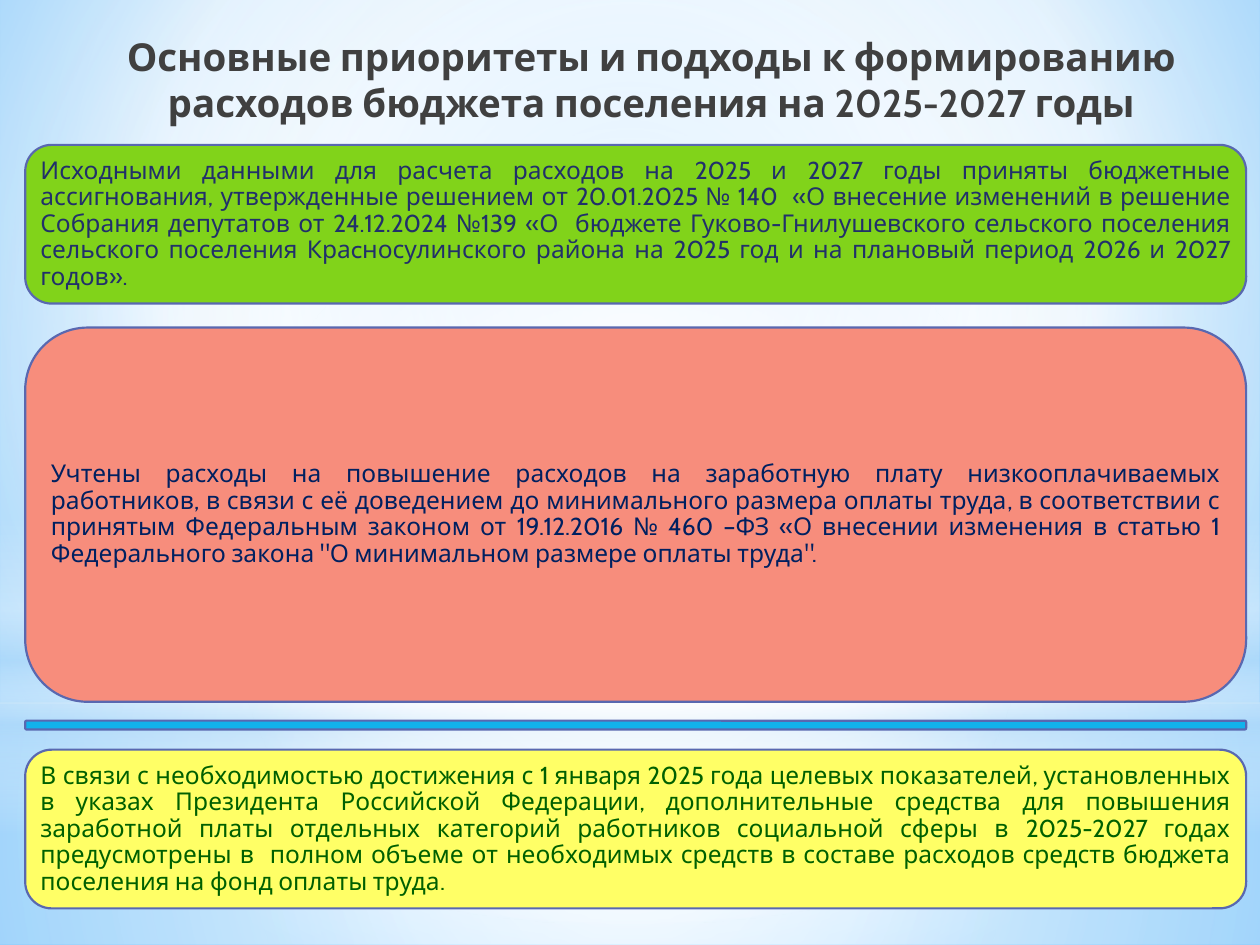
from dataclasses import dataclass
from typing import Optional

from pptx import Presentation
from pptx.dml.color import RGBColor
from pptx.enum.shapes import MSO_SHAPE
from pptx.enum.text import MSO_ANCHOR, MSO_AUTO_SIZE, PP_ALIGN
from pptx.oxml import parse_xml
from pptx.oxml.ns import nsdecls, qn
from pptx.util import Inches, Pt

RECT, OVAL, ROUNDED = MSO_SHAPE.RECTANGLE, MSO_SHAPE.OVAL, MSO_SHAPE.ROUNDED_RECTANGLE
CENTER, JUSTIFY = PP_ALIGN.CENTER, PP_ALIGN.JUSTIFY
TOP, MIDDLE = MSO_ANCHOR.TOP, MSO_ANCHOR.MIDDLE

# Grid of 200 columns by 150 rows
CELL = 0.05
COLUMNS, ROWS = 200, 150
PANEL_LEFT, PANEL_WIDTH = 4, 193.8
# Share of the height by which a rounded corner pushes text inwards
CORNER_INSET = 0.29 / 6


@dataclass(frozen=True)
class Theme:
    font: str = "Cabin"
    title_size: float = 22
    body_size: float = 14
    title: str = "404040"
    outline: str = "5968B0"
    outline_width: float = 1.25
    green: str = "81D31A"
    coral: str = "F78D7C"
    blue: str = "12B2EB"
    yellow: str = "FFFF66"
    indigo_text: str = "21306A"
    navy_text: str = "002060"
    green_text: str = "006000"


THEME = Theme()


@dataclass(frozen=True)
class Gradient:
    stops: tuple  # (position %, colour, opacity %)
    center: Optional[tuple] = (50, 50, 50, 50)  # None means top to bottom


@dataclass(frozen=True)
class Glow:
    kind: int
    top: float
    height: float
    gradient: Gradient


@dataclass(frozen=True)
class Panel:
    top: float
    height: float
    fill: str
    color: str = ""
    text: str = ""


BACKGROUND = Gradient(((0, "9ED5FF", 100), (60, "FFFFFF", 100), (100, "5BB9FF", 100)),
                      (20, 10, 20, 60))
GLOWS = (
    Glow(RECT, 111.6, 38.4, Gradient(
        ((0, "FFFFFF", 91), (37, "FFFFFF", 76), (100, "B4DCFA", 79)))),
    Glow(RECT, 0, 111.6, Gradient(
        ((0, "FFFFFF", 89), (48, "FFFFFF", 62), (100, "B4DCFA", 79)))),
    Glow(RECT, 82.4, 50, Gradient(
        ((0, "FFFFFF", 0), (29, "FFFFFF", 30), (45, "B4DCFA", 40),
         (55, "FFFFFF", 26), (65, "B4DCFA", 60), (100, "FFFFFF", 0)), None)),
    Glow(OVAL, 35, 111.6, Gradient(((0, "FFFFFF", 100), (56, "FFFFFF", 0)))),
)

HEADING = ("Основные приоритеты и подходы к формированию "
           "расходов бюджета поселения на 2025-2027 годы")
PANELS = (
    Panel(23, 25.2, THEME.green, THEME.indigo_text,
          "Исходными данными для расчета расходов на 2025 и 2027 годы приняты бюджетные "
          "ассигнования, утвержденные решением от 20.01.2025 № 140  «О внесение изменений "
          "в решение Собрания депутатов от 24.12.2024 №139 «О  бюджете "
          "Гуково-Гнилушевского сельского поселения сельского поселения "
          "Краcносулинского района на 2025 год и на плановый период 2026 и 2027 годов»."),
    Panel(52, 59.4, THEME.coral, THEME.navy_text,
          "Учтены расходы на повышение расходов на заработную плату низкооплачиваемых "
          "работников, в связи с её доведением до минимального размера оплаты труда, "
          "в соответствии с принятым Федеральным законом от 19.12.2016 № 460 –ФЗ "
          "«О внесении изменения в статью 1 Федерального закона "
          '"О минимальном размере оплаты труда".'),
    Panel(114.4, 1.4, THEME.blue),
    Panel(119, 25.2, THEME.yellow, THEME.green_text,
          "В связи с необходимостью достижения с 1 января 2025 года целевых показателей, "
          "установленных в указах Президента Российской Федерации, дополнительные "
          "средства для повышения заработной платы отдельных категорий работников "
          "социальной сферы в 2025-2027 годах предусмотрены в  полном объеме от "
          "необходимых средств в составе расходов средств бюджета поселения на фонд "
          "оплаты труда."),
)


def grid(*cells: float) -> list:
    return [Inches(cell * CELL) for cell in cells]


def set_gradient(fill, owner, gradient: Gradient) -> None:
    """Replace the fill inside the owner element with a gradient."""
    stops = "".join(
        f'<a:gs pos="{position * 1000}"><a:srgbClr val="{color}">'
        f'<a:alpha val="{opacity * 1000}"/></a:srgbClr></a:gs>'
        for position, color, opacity in gradient.stops)
    if gradient.center:
        sides = " ".join(f'{side}="{share * 1000}"'
                         for side, share in zip("ltrb", gradient.center))
        direction = f'<a:path path="circle"><a:fillToRect {sides}/></a:path>'
    else:
        direction = '<a:lin ang="5400000" scaled="0"/>'
    fill.background()
    blank = owner.find(".//" + qn("a:noFill"))
    blank.getparent().replace(blank, parse_xml(
        f'<a:gradFill {nsdecls("a")} rotWithShape="1">'
        f'<a:gsLst>{stops}</a:gsLst>{direction}</a:gradFill>'))


def write(frame, text: str, *, size: float, color: str, align, anchor,
          bold: bool = False, spacing: float = 1, before: float = 0,
          after: float = 0, inset: float = 0.06) -> None:
    frame.word_wrap = True
    frame.auto_size = MSO_AUTO_SIZE.NONE
    frame.vertical_anchor = anchor
    frame.margin_left = frame.margin_right = Inches(inset)
    frame.margin_top = frame.margin_bottom = Inches(inset)
    paragraph = frame.paragraphs[0]
    paragraph.alignment = align
    paragraph.line_spacing = spacing
    paragraph.space_before, paragraph.space_after = Pt(before), Pt(after)
    run = paragraph.add_run()
    run.text = text
    run.font.name, run.font.size, run.font.bold = THEME.font, Pt(size), bold
    run.font.color.rgb = RGBColor.from_string(color)


def draw_glow(slide, glow: Glow) -> None:
    shape = slide.shapes.add_shape(glow.kind, *grid(0, glow.top, COLUMNS, glow.height))
    shape.shadow.inherit = False
    set_gradient(shape.fill, shape.element, glow.gradient)
    shape.line.fill.background()


def draw_heading(slide) -> None:
    heading = slide.shapes.title
    heading.left, heading.top, heading.width, heading.height = grid(15, 4.2, 174.8, 17.4)
    # Bring the heading in front of the glows
    heading.element.getparent().append(heading.element)
    write(heading.text_frame, HEADING, size=THEME.title_size, color=THEME.title,
          align=CENTER, anchor=TOP, bold=True, before=4.4, after=3, inset=0.05)
    heading.text_frame.margin_left = Inches(0.15)


def draw_panel(slide, panel: Panel) -> None:
    box = slide.shapes.add_shape(
        ROUNDED, *grid(PANEL_LEFT, panel.top, PANEL_WIDTH, panel.height))
    box.shadow.inherit = False
    box.fill.solid()
    box.fill.fore_color.rgb = RGBColor.from_string(panel.fill)
    box.line.color.rgb = RGBColor.from_string(THEME.outline)
    box.line.width = Pt(THEME.outline_width)
    if panel.text:
        inset = panel.height * CORNER_INSET
        label = slide.shapes.add_textbox(*grid(
            PANEL_LEFT + inset, panel.top + inset,
            PANEL_WIDTH - 2 * inset, panel.height - 2 * inset))
        write(label.text_frame, panel.text, size=THEME.body_size, color=panel.color,
              align=JUSTIFY, anchor=MIDDLE, spacing=0.9, after=4.9)


def main() -> None:
    deck = Presentation()
    deck.slide_width, deck.slide_height = grid(COLUMNS, ROWS)
    slide = deck.slides.add_slide(deck.slide_layouts.get_by_name("Title Only"))

    # Backdrop
    set_gradient(slide.background.fill, slide.element, BACKGROUND)
    for glow in GLOWS:
        draw_glow(slide, glow)

    # Content
    draw_heading(slide)
    for panel in PANELS:
        draw_panel(slide, panel)
    deck.save("out.pptx")


if __name__ == "__main__":
    main()
